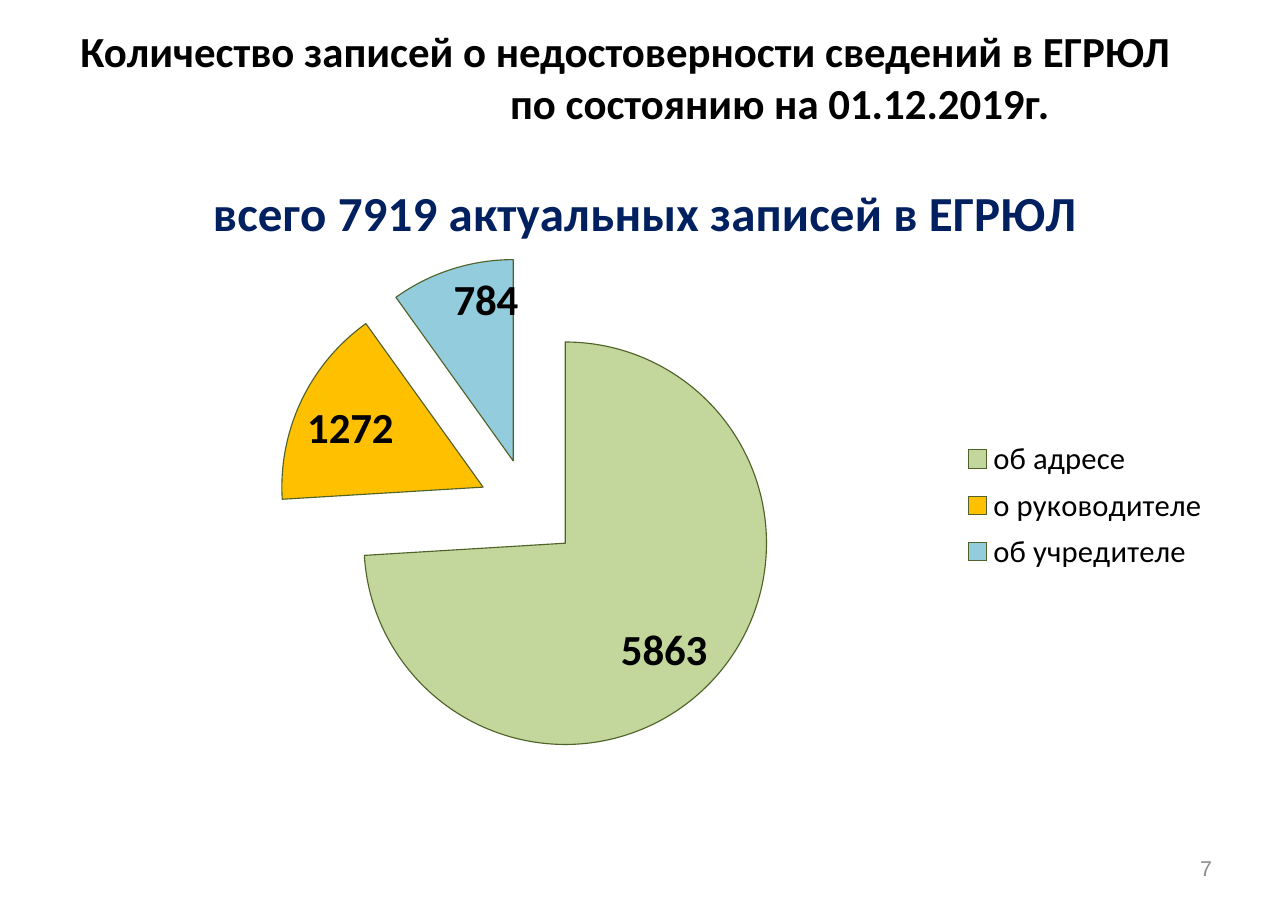
import pptx
import pptx.chart.data
import pptx.dml.color
import pptx.enum.chart
import pptx.enum.text
import pptx.oxml
import pptx.oxml.ns
import pptx.util

Inches = pptx.util.Inches
Pt = pptx.util.Pt
RGBColor = pptx.dml.color.RGBColor
PP_ALIGN = pptx.enum.text.PP_ALIGN
qn = pptx.oxml.ns.qn

BLACK = RGBColor(0x00, 0x00, 0x00)
NAVY = RGBColor(0x00, 0x20, 0x60)
GREY = RGBColor(0x8C, 0x8C, 0x8C)
OLIVE = RGBColor(0x4F, 0x62, 0x28)
GREEN = RGBColor(0xC3, 0xD6, 0x9B)
AMBER = RGBColor(0xFF, 0xC0, 0x00)
SKY = RGBColor(0x93, 0xCD, 0xDD)


class RecordsSlide:
    """Style and drawing methods for the current slide."""

    font_name = "Calibri"

    def __init__(self, deck):
        self.slide = deck.slides.add_slide(deck.slide_layouts[6])

    def style(self, font, size, color=BLACK, bold=False, name=None):
        font.name = name or self.font_name
        font.size = Pt(size)
        font.bold = bold
        font.color.rgb = color

    def text(self, box, lines, size, align=PP_ALIGN.LEFT, indents=(0,), **look):
        frame = self.slide.shapes.add_textbox(*map(Inches, box)).text_frame
        frame.word_wrap = True
        frame.vertical_anchor = pptx.enum.text.MSO_ANCHOR.MIDDLE
        frame.margin_left = frame.margin_right = Inches(0.11)
        frame.margin_top = frame.margin_bottom = Inches(0.06)
        frame.text = "\n".join(lines)
        for paragraph, indent in zip(frame.paragraphs, indents):
            paragraph.alignment = align
            paragraph._p.get_or_add_pPr().set("marL", str(Inches(indent)))
            self.style(paragraph.runs[0].font, size, **look)

    def pie(self, box, title, slices, explosion, title_at, plot_at, legend_at):
        data = pptx.chart.data.CategoryChartData()
        data.categories = [name for name, _, _ in slices]
        data.add_series("Series 1", [value for _, value, _ in slices])
        chart = self.slide.shapes.add_chart(
            pptx.enum.chart.XL_CHART_TYPE.PIE, *map(Inches, box), data
        ).chart
        self.style(chart.font, 18)

        # Title and legend
        chart.has_title = True
        heading = chart.chart_title.text_frame
        heading.text = title
        self.style(heading.paragraphs[0].runs[0].font, 32, NAVY, bold=True)
        chart.chart_title.include_in_layout = False
        chart.has_legend = True
        chart.legend.position = pptx.enum.chart.XL_LEGEND_POSITION.RIGHT
        chart.legend.include_in_layout = False
        self.style(chart.legend.font, 20)

        # Slices and their values
        pie = chart.plots[0]
        pie.vary_by_categories = True
        pie.has_data_labels = True
        labels = pie.data_labels
        labels.show_value = True
        labels.show_percentage = False
        labels.position = pptx.enum.chart.XL_LABEL_POSITION.INSIDE_END
        self.style(labels.font, 28, bold=True)
        for index, (_, _, color) in enumerate(slices):
            part = pie.series[0].points[index].format
            part.fill.solid()
            part.fill.fore_color.rgb = color
            part.line.color.rgb = OLIVE
            part.line.width = Pt(0.75)
        first_slice = chart.element.find(".//" + qn("c:dPt"))
        first_slice.addprevious(self.chart_xml("explosion", f' val="{explosion}"'))

        # Places inside the chart, as shares of its size
        self.place(chart, "title", title_at)
        self.place(chart, "plotArea", plot_at)
        self.place(chart, "legend", legend_at)

    def place(self, chart, tag, place):
        part = chart.element.find(".//" + qn(f"c:{tag}"))
        for old in part.findall(qn("c:layout")):
            part.remove(old)
        rules = [("layoutTarget", "inner")] if tag == "plotArea" else []
        rules += [("xMode", "edge"), ("yMode", "edge"), *zip("xywh", place)]
        inner = "".join(f'<c:{rule} val="{value}"/>' for rule, value in rules)
        manual = f"<c:manualLayout>{inner}</c:manualLayout>"
        position = 0 if tag == "plotArea" else 1
        part.insert(position, self.chart_xml("layout", "", manual))

    def chart_xml(self, tag, attributes, body=""):
        space = pptx.oxml.ns.nsdecls("c")
        return pptx.oxml.parse_xml(f"<c:{tag} {space}{attributes}>{body}</c:{tag}>")


def main():
    deck = pptx.Presentation()
    deck.slide_width, deck.slide_height = Inches(11.69), Inches(8.27)
    records = RecordsSlide(deck)

    # Heading
    records.text(
        (0.59, 0.33, 10.52, 0.73),
        ["Количество записей о недостоверности сведений в ЕГРЮЛ",
         "по состоянию на 01.12.2019г."],
        28, indents=(0.03, 3.93), bold=True,
    )

    # Records by subject
    records.pie(
        (0.59, 1.3, 10.52, 6.09),
        "всего 7919 актуальных записей в ЕГРЮЛ",
        [("об адресе", 5863, GREEN),
         ("о руководителе", 1272, AMBER),
         ("об учредителе", 784, SKY)],
        explosion=25,
        title_at=(0.12, 0.04),
        plot_at=(0.07, 0.17, 0.66, 0.75),
        legend_at=(0.77, 0.43, 0.22, 0.22),
    )

    # Page number
    records.text((8.38, 7.66, 2.73, 0.44), ["7"], 14, PP_ALIGN.RIGHT,
                 color=GREY, name="Arial")

    deck.save("out.pptx")


if __name__ == "__main__":
    main()
